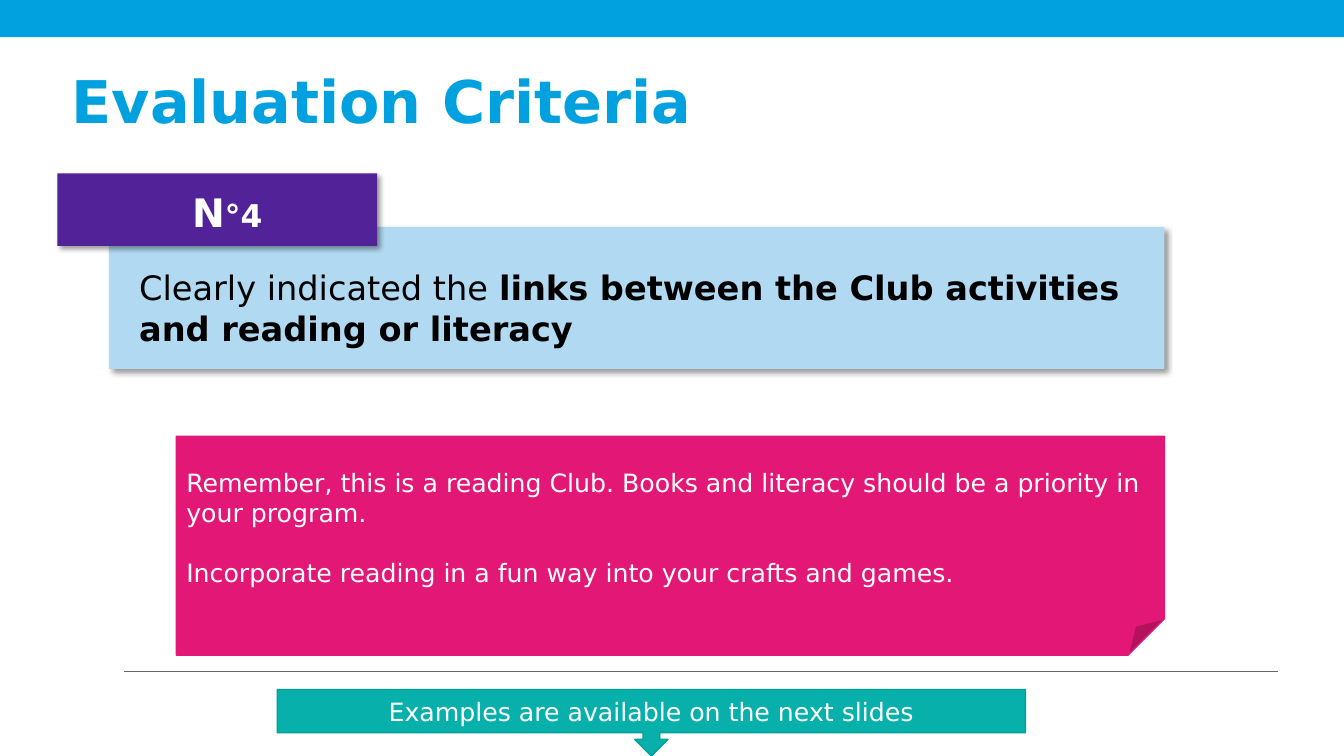
from lxml import etree
from pptx import Presentation
from pptx.dml.color import RGBColor
from pptx.enum.shapes import MSO_CONNECTOR as Connector, MSO_SHAPE as Shape
from pptx.enum.text import MSO_ANCHOR as Anchor, MSO_AUTO_SIZE as AutoSize, PP_ALIGN as Align
from pptx.oxml import parse_xml
from pptx.oxml.ns import nsdecls, qn
from pptx.util import Inches, Pt

FONT = "DejaVu Sans"
BLUE, WHITE, BLACK = "00A1DE", "FFFFFF", "000000"
SHADOW = f"""<a:effectLst {nsdecls('a')}>
  <a:outerShdw blurRad="50800" dist="38100" dir="2700000" algn="tl" rotWithShape="0">
    <a:srgbClr val="000000"><a:alpha val="40000"/></a:srgbClr>
  </a:outerShdw>
</a:effectLst>"""


def color(hex_value):
    return RGBColor.from_string(hex_value)


def set_font(paragraph, size, hex_value, bold=False):
    font = paragraph.font
    font.name, font.size, font.bold = FONT, Pt(size), bold
    font.color.rgb = color(hex_value)


def add_panel(slide, kind, box, fill, line=None, shadow=False):
    panel = slide.shapes.add_shape(kind, *map(Inches, box))
    panel.fill.solid()
    panel.fill.fore_color.rgb = color(fill)
    if line:
        panel.line.color.rgb = color(line)
        panel.line.width = Pt(1)
    else:
        panel.line.fill.background()
    panel.shadow.inherit = False
    if shadow:
        properties = panel._element.spPr
        properties.replace(properties.find(qn("a:effectLst")), parse_xml(SHADOW))
    return panel


def prepare_text(panel, anchor=Anchor.MIDDLE, insets=(0.1, 0.05, 0.1, 0.05)):
    """Set anchor and insets (left, top, right, bottom); return the text frame."""
    frame = panel.text_frame
    frame.word_wrap = True
    frame.vertical_anchor = anchor
    frame.margin_left, frame.margin_top, frame.margin_right, frame.margin_bottom = map(Inches, insets)
    return frame


def add_header(slide, box):
    left, top, width, height = box
    bar_height = 0.37
    add_panel(slide, Shape.RECTANGLE, (left, top, width, bar_height), BLUE)
    title = slide.shapes.title
    title.left, title.top = Inches(left + 0.61), Inches(top + bar_height)
    title.width, title.height = Inches(12.03), Inches(height - bar_height)
    frame = prepare_text(title, Anchor.BOTTOM)
    frame.auto_size = AutoSize.NONE
    frame.text = "Evaluation Criteria"
    heading = frame.paragraphs[0]
    heading.alignment = Align.LEFT
    set_font(heading, 42, BLUE, bold=True)


def add_criterion(slide, box, number, lead, emphasis):
    """Place a numbered tab over the top left corner of the criterion panel."""
    left, top, width, height = box
    panel_left, panel_top = 0.51, 0.53
    panel = add_panel(slide, Shape.RECTANGLE,
                      (left + panel_left, top + panel_top, width - panel_left, height - panel_top),
                      "B1D9F1", shadow=True)
    statement = prepare_text(panel, Anchor.TOP, (0.3, 0.4, 0.3, 0.2)).paragraphs[0]
    statement.alignment = Align.LEFT
    set_font(statement, 24, BLACK)
    statement.add_run().text = lead
    strong = statement.add_run()
    strong.text = emphasis
    strong.font.bold = True

    tab = add_panel(slide, Shape.RECTANGLE, (left, top, 3.17, 0.72), "522398", shadow=True)
    label = prepare_text(tab, insets=(0.3, 0.15, 0.1, 0.1)).paragraphs[0]
    label.alignment = Align.CENTER
    set_font(label, 28, WHITE, bold=True)
    run = label.add_run()
    run.text = number
    run.font._element.set("cap", "small")


def add_reminder(slide, box, reminders):
    note = add_panel(slide, Shape.FOLDED_CORNER, box, "E21776", line="E21776")
    frame = prepare_text(note)
    for index, reminder in enumerate(reminders):
        paragraph = frame.add_paragraph() if index else frame.paragraphs[0]
        paragraph.text = reminder
        paragraph.alignment = Align.LEFT
        if index:
            paragraph.space_before = Pt(21)
        set_font(paragraph, 18, WHITE)


def add_footer(slide, box):
    left, top, width, height = box
    rule = slide.shapes.add_connector(Connector.STRAIGHT, Inches(left), Inches(top),
                                      Inches(left + width), Inches(top))
    rule.line.color.rgb = color("666666")
    rule.line.width = Pt(0.5)
    etree.SubElement(rule._element.spPr, qn("a:effectLst"))

    callout = add_panel(slide, Shape.DOWN_ARROW_CALLOUT,
                        (left + 1.52, top + 0.18, 7.42, height - 0.18), "07B0AB", line="00A198")
    pointer = prepare_text(callout).paragraphs[0]
    pointer.text = "Examples are available on the next slides"
    pointer.alignment = Align.CENTER
    set_font(pointer, 18, WHITE)


def main():
    deck = Presentation()
    deck.slide_width, deck.slide_height = Inches(13.33), Inches(7.5)
    slide = deck.slides.add_slide(deck.slide_layouts[5])
    add_header(slide, (0, 0, 13.33, 1.39))
    add_criterion(slide, (0.57, 1.72, 10.98, 1.94), "N°4", "Clearly indicated the ",
                  "links between the Club activities and reading or literacy")
    add_reminder(slide, (1.75, 4.33, 9.8, 2.17), [
        "Remember, this is a reading Club. Books and literacy should be a priority in your program.",
        "Incorporate reading in a fun way into your crafts and games.",
    ])
    add_footer(slide, (1.23, 6.66, 11.45, 0.84))
    deck.save("out.pptx")


if __name__ == "__main__":
    main()
